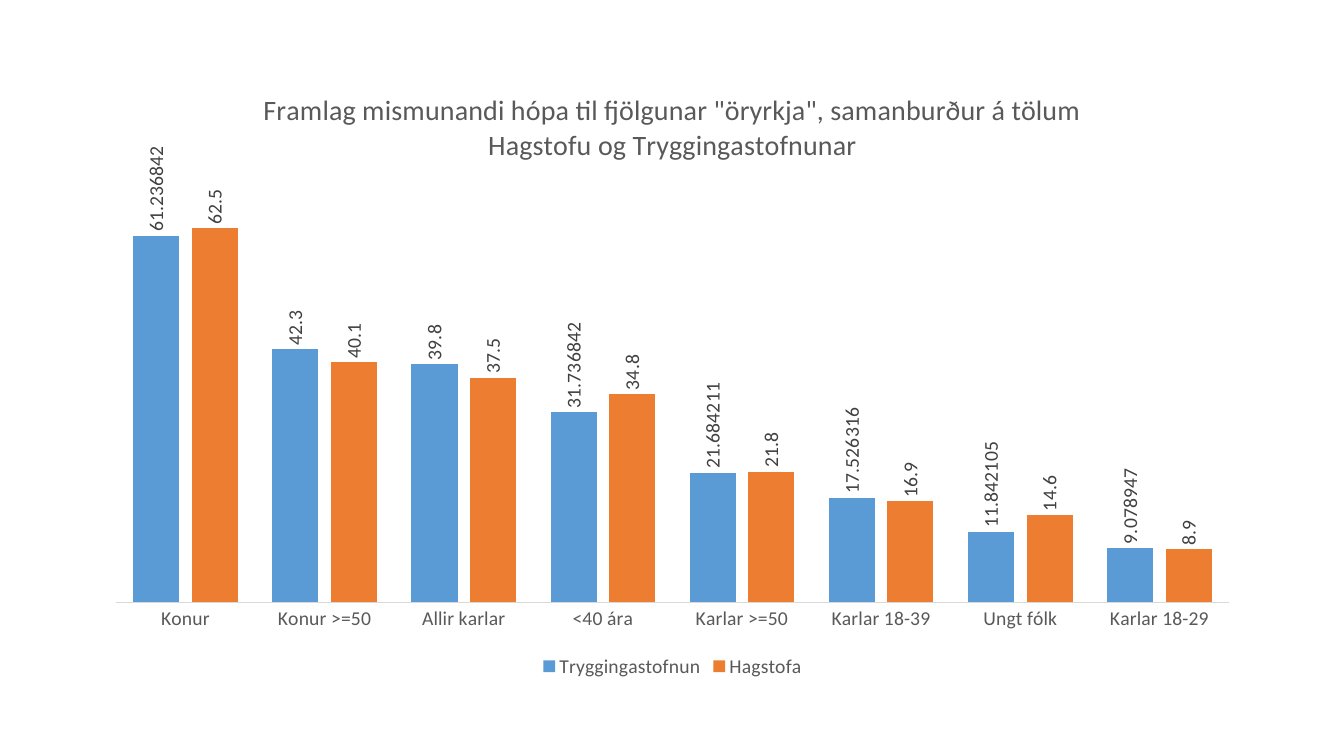
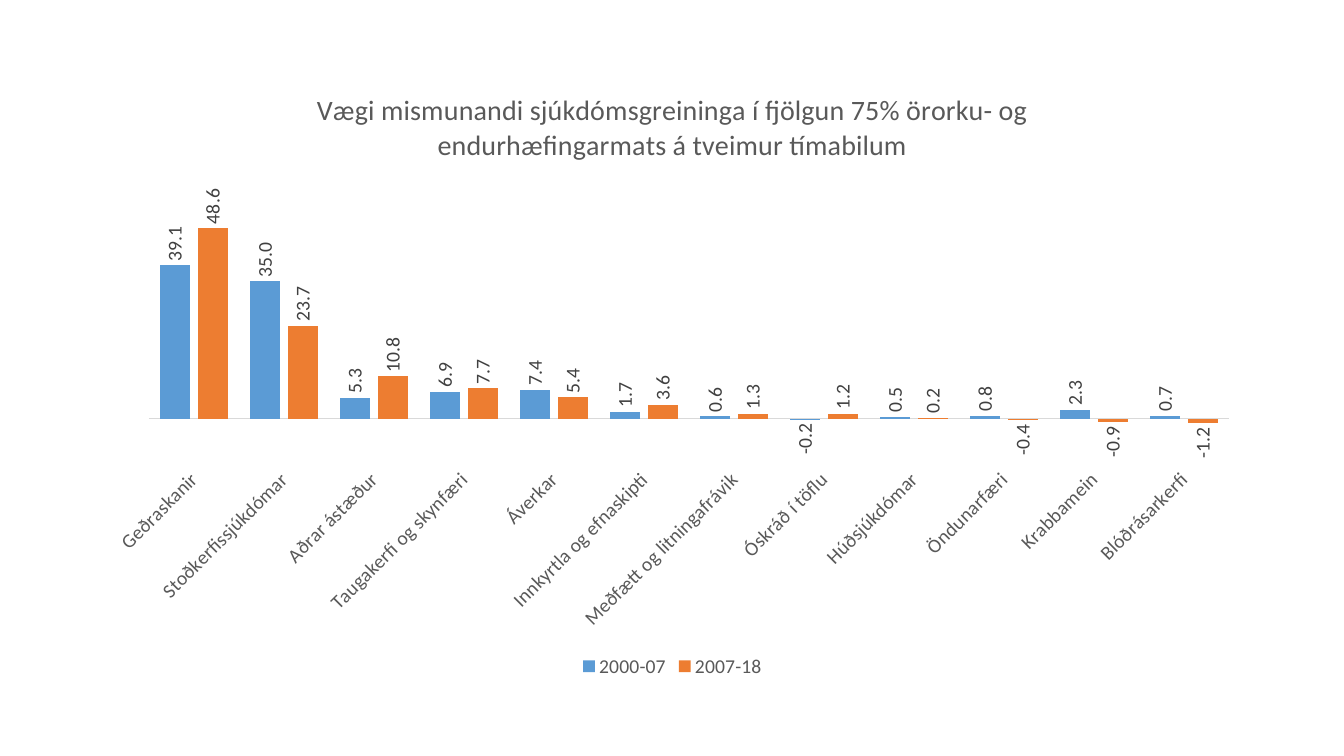
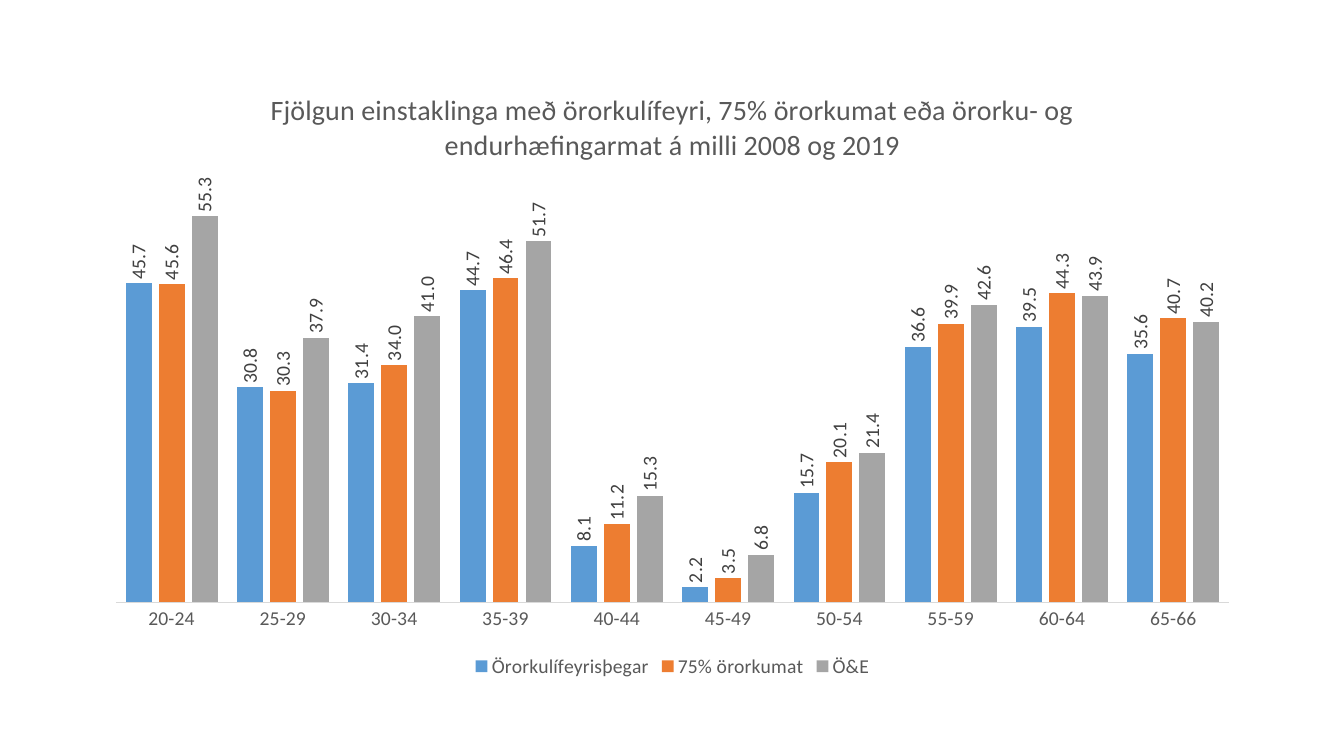
import dataclasses

import pptx
import pptx.chart.data
import pptx.dml.color
import pptx.enum.chart
import pptx.oxml.ns
import pptx.util


@dataclasses.dataclass(frozen=True)
class Theme:
    face: str = "Calibri"
    title_size: int = 20
    body_size: int = 14
    text: str = "595959"
    label: str = "404040"
    axis: str = "D9D9D9"
    bars: tuple = ("5B9BD5", "ED7D31", "A5A5A5")


theme = Theme()
rgb = pptx.dml.color.RGBColor.from_string
tick_place = pptx.enum.chart.XL_TICK_LABEL_POSITION


def set_text(target, text=None, size=theme.body_size, color=theme.text, turn=None):
    """Write text if given, then set its font and its turn in degrees."""
    if text is None:
        font = target.font
    else:
        run = target.text_frame.paragraphs[0].add_run()
        run.text = text
        font = run.font
    font.name = theme.face
    font.size = pptx.util.Pt(size)
    font.bold = False
    font.color.rgb = rgb(color)
    if turn is not None:
        body = next(target._element.iter(pptx.oxml.ns.qn("a:bodyPr")))
        body.set("rot", str(turn * 60000))
        body.set("vert", "horz")


# Content: each series is name, label format, values
slides = [
    dict(
        title='Framlag mismunandi hópa til fjölgunar "öryrkja", samanburður á tölum '
              'Hagstofu og Tryggingastofnunar',
        groups=["Konur", "Konur >=50", "Allir karlar", "<40 ára", "Karlar >=50",
                "Karlar 18-39", "Ungt fólk", "Karlar 18-29"],
        series=[
            ("Tryggingastofnun", "General",
             [61.236842, 42.3, 39.8, 31.736842, 21.684211,
              17.526316, 11.842105, 9.078947]),
            ("Hagstofa", "0.0", [62.5, 40.1, 37.5, 34.8, 21.8, 16.9, 14.6, 8.9]),
        ],
        names_at=tick_place.NEXT_TO_AXIS, turn=None,
    ),
    dict(
        title="Vægi mismunandi sjúkdómsgreininga í fjölgun 75% örorku- og "
              "endurhæfingarmats á tveimur tímabilum",
        groups=["Geðraskanir", "Stoðkerfissjúkdómar", "Aðrar ástæður",
                "Taugakerfi og skynfæri", "Áverkar", "Innkyrtla og efnaskipti",
                "Meðfætt og litningafrávik", "Óskráð í töflu", "Húðsjúkdómar",
                "Öndunarfæri", "Krabbamein", "Blóðrásarkerfi"],
        series=[
            ("2000-07", "0.0",
             [39.1, 35, 5.3, 6.9, 7.4, 1.7, 0.6, -0.2, 0.5, 0.8, 2.3, 0.7]),
            ("2007-18", "0.0",
             [48.6, 23.7, 10.8, 7.7, 5.4, 3.6, 1.3, 1.2, 0.2, -0.4, -0.9, -1.2]),
        ],
        names_at=tick_place.LOW, turn=-45,
    ),
    dict(
        title="Fjölgun einstaklinga með örorkulífeyri, 75% örorkumat eða örorku- og "
              "endurhæfingarmat á milli 2008 og 2019",
        groups=["20-24", "25-29", "30-34", "35-39", "40-44",
                "45-49", "50-54", "55-59", "60-64", "65-66"],
        series=[
            ("Örorkulífeyrisþegar", "0.0",
             [45.7, 30.8, 31.4, 44.7, 8.1, 2.2, 15.7, 36.6, 39.5, 35.6]),
            ("75% örorkumat", "0.0",
             [45.6, 30.3, 34, 46.4, 11.2, 3.5, 20.1, 39.9, 44.3, 40.7]),
            ("Ö&E", "0.0",
             [55.3, 37.9, 41, 51.7, 15.3, 6.8, 21.4, 42.6, 43.9, 40.2]),
        ],
        names_at=tick_place.NEXT_TO_AXIS, turn=None,
    ),
]

deck = pptx.Presentation()
deck.slide_width = pptx.util.Inches(13.33)
deck.slide_height = pptx.util.Inches(7.5)
blank = deck.slide_layouts[6]
frame = [pptx.util.Inches(length) for length in (0.92, 0.67, 11.5, 6.1)]

for content in slides:
    # Data
    figures = pptx.chart.data.CategoryChartData()
    figures.categories = content["groups"]
    for name, number_format, values in content["series"]:
        figures.add_series(name, values, number_format)
    chart = deck.slides.add_slide(blank).shapes.add_chart(
        pptx.enum.chart.XL_CHART_TYPE.COLUMN_CLUSTERED, *frame, figures).chart
    chart.font.name = theme.face
    chart.font.size = pptx.util.Pt(theme.body_size)

    # Title and legend
    set_text(chart.chart_title, content["title"], size=theme.title_size)
    chart.chart_title.include_in_layout = False
    chart.has_legend = True
    chart.legend.position = pptx.enum.chart.XL_LEGEND_POSITION.BOTTOM
    chart.legend.include_in_layout = False
    set_text(chart.legend)

    # Axes
    groups_axis = chart.category_axis
    set_text(groups_axis.tick_labels, turn=content["turn"])
    groups_axis.tick_label_position = content["names_at"]
    groups_axis.major_tick_mark = pptx.enum.chart.XL_TICK_MARK.NONE
    groups_axis.minor_tick_mark = pptx.enum.chart.XL_TICK_MARK.NONE
    groups_axis.format.line.color.rgb = rgb(theme.axis)
    groups_axis.format.line.width = pptx.util.Pt(0.75)
    chart.value_axis.has_major_gridlines = False
    chart.value_axis.visible = False

    # Columns and their upright labels
    columns = chart.plots[0]
    columns.gap_width = 75
    columns.overlap = -27
    columns.vary_by_categories = False
    for column, color, (_, number_format, _) in zip(
            columns.series, theme.bars, content["series"]):
        column.invert_if_negative = False
        column.format.fill.solid()
        column.format.fill.fore_color.rgb = rgb(color)
        labels = column.data_labels
        labels.show_value = True
        labels.number_format = number_format
        labels.number_format_is_linked = False
        labels.position = pptx.enum.chart.XL_LABEL_POSITION.OUTSIDE_END
        set_text(labels, color=theme.label, turn=-90)

deck.save("out.pptx")
